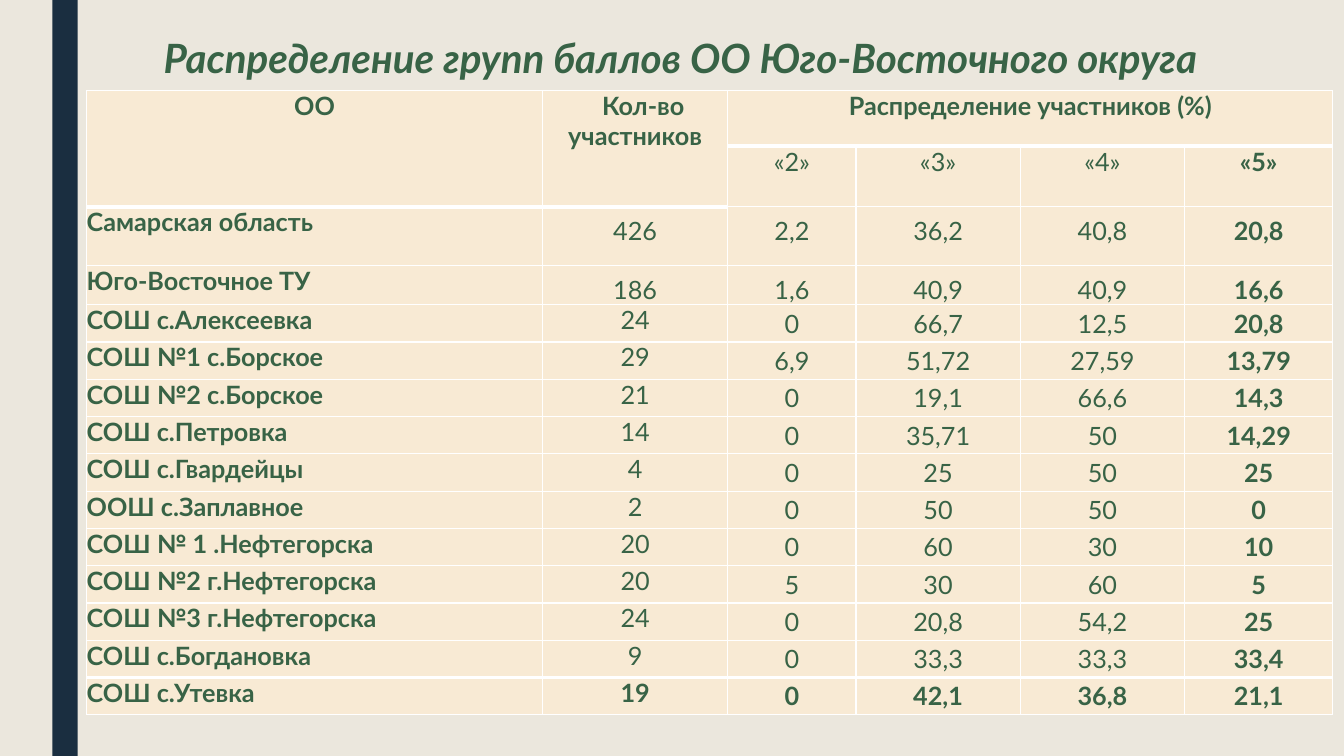
from dataclasses import astuple, dataclass

import lxml.etree
import pptx
import pptx.dml.color
import pptx.enum.shapes
import pptx.enum.text
import pptx.oxml.ns
import pptx.presentation
import pptx.slide
import pptx.table
import pptx.text.text
import pptx.util

Inches = pptx.util.Inches
Pt = pptx.util.Pt
CENTER = pptx.enum.text.PP_ALIGN.CENTER
LEFT = pptx.enum.text.PP_ALIGN.LEFT
TOP = pptx.enum.text.MSO_ANCHOR.TOP
MIDDLE = pptx.enum.text.MSO_ANCHOR.MIDDLE

FONT = "Lato"
GREEN = "386346"
CREAM = "F8EAD4"
SAND = "EBE7DD"
NAVY = "1A2E40"
WHITE = "FFFFFF"


@dataclass
class Result:
    school: str
    participants: str
    twos: str
    threes: str
    fours: str
    fives: str


HEADINGS = [
    Result("ОО", "Кол-во участников", "Распределение участников (%)", "", "", ""),
    Result("", "", "«2»", "«3»", "«4»", "«5»"),
]
REGIONS = [
    Result("Самарская область", "426", "2,2", "36,2", "40,8", "20,8"),
    Result("Юго-Восточное ТУ", "186", "1,6", "40,9", "40,9", "16,6"),
]
SCHOOLS = [
    Result("СОШ с.Алексеевка", "24", "0", "66,7", "12,5", "20,8"),
    Result("СОШ №1 с.Борское", "29", "6,9", "51,72", "27,59", "13,79"),
    Result("СОШ №2 с.Борское", "21", "0", "19,1", "66,6", "14,3"),
    Result("СОШ с.Петровка", "14", "0", "35,71", "50", "14,29"),
    Result("СОШ с.Гвардейцы", "4", "0", "25", "50", "25"),
    Result("ООШ с.Заплавное", "2", "0", "50", "50", "0"),
    Result("СОШ № 1 .Нефтегорска", "20", "0", "60", "30", "10"),
    Result("СОШ №2 г.Нефтегорска", "20", "5", "30", "60", "5"),
    Result("СОШ №3 г.Нефтегорска", "24", "0", "20,8", "54,2", "25"),
    Result("СОШ с.Богдановка", "9", "0", "33,3", "33,3", "33,4"),
    Result("СОШ с.Утевка", "19", "0", "42,1", "36,8", "21,1"),
]
RESULTS = HEADINGS + REGIONS + SCHOOLS
FIRST_REGION = len(HEADINGS)
FIRST_SCHOOL = FIRST_REGION + len(REGIONS)
LAST_ROW = len(RESULTS) - 1
COLUMN_WIDTHS = [4.52, 1.84, 1.27, 1.63, 1.63, 1.47]
ROW_HEIGHTS = [0.55, 0.6, 0.58, 0.39] + [0.37] * len(SCHOOLS)


def color(value: str) -> pptx.dml.color.RGBColor:
    return pptx.dml.color.RGBColor.from_string(value)


def style_text(paragraph: pptx.text.text._Paragraph, size: float,
               bold: bool, italic: bool = False) -> None:
    for run in paragraph.runs:
        run.font.name = FONT
        run.font.size = Pt(size)
        run.font.bold = bold
        run.font.italic = italic
        run.font.color.rgb = color(GREEN)


def edge_width(boundary: int, column: int) -> int:
    under_merged_heading = boundary == FIRST_REGION and column < 2
    return 3 if boundary in (1, LAST_ROW) or under_merged_heading else 1


def draw_borders(cell: pptx.table._Cell, row: int, column: int) -> None:
    widths = {"lnL": 1, "lnR": 1, "lnT": edge_width(row, column),
              "lnB": edge_width(row + 1, column)}
    properties = cell._tc.get_or_add_tcPr()
    for position, (edge, width) in enumerate(widths.items()):
        line = lxml.etree.Element(pptx.oxml.ns.qn(f"a:{edge}"), w=str(Pt(width)))
        fill = lxml.etree.SubElement(line, pptx.oxml.ns.qn("a:solidFill"))
        lxml.etree.SubElement(fill, pptx.oxml.ns.qn("a:srgbClr"), val=WHITE)
        properties.insert(position, line)


def fill_cell(cell: pptx.table._Cell, value: str, row: int, column: int) -> None:
    cell.fill.solid()
    cell.fill.fore_color.rgb = color(CREAM)
    cell.margin_left = cell.margin_right = cell.margin_top = cell.margin_bottom = 0
    cell.vertical_anchor = MIDDLE if row >= FIRST_SCHOOL and column >= 2 else TOP
    draw_borders(cell, row, column)
    if not value:
        return
    cell.text_frame.text = value
    paragraph = cell.text_frame.paragraphs[0]
    is_school_name = row >= FIRST_REGION and column == 0
    paragraph.alignment = LEFT if is_school_name else CENTER
    if FIRST_REGION <= row < FIRST_SCHOOL and column > 0:
        cell.margin_top = Inches(0.21)
        paragraph.line_spacing = Pt(13.2)
    if row == 0 and column == 1:
        paragraph._p.get_or_add_pPr().set("indent", str(Inches(0.16)))
    style_text(paragraph, 18, row in (0, LAST_ROW) or column in (0, 5))


def add_results_table(slide: pptx.slide.Slide) -> None:
    table = slide.shapes.add_table(
        len(RESULTS), len(COLUMN_WIDTHS), Inches(0.86), Inches(0.9),
        Inches(sum(COLUMN_WIDTHS)), Inches(sum(ROW_HEIGHTS))).table
    table.first_row = table.horz_banding = False
    for column, width in zip(table.columns, COLUMN_WIDTHS):
        column.width = Inches(width)
    for row, height in zip(table.rows, ROW_HEIGHTS):
        row.height = Inches(height)
    for row_index, result in enumerate(RESULTS):
        for column_index, value in enumerate(astuple(result)):
            fill_cell(table.cell(row_index, column_index), value, row_index, column_index)
    for column_index in (0, 1):
        table.cell(0, column_index).merge(table.cell(1, column_index))
    table.cell(0, 2).merge(table.cell(0, 5))


def format_title(slide: pptx.slide.Slide) -> None:
    title = slide.shapes.title
    title.left, title.top = Inches(1.5), Inches(0.34)
    title.width, title.height = Inches(10.5), Inches(0.87)
    title.fill.solid()
    title.fill.fore_color.rgb = color(SAND)
    frame = title.text_frame
    frame.text = "Распределение групп баллов ОО Юго-Восточного округа"
    frame.word_wrap = True
    frame.auto_size = pptx.enum.text.MSO_AUTO_SIZE.NONE
    frame.vertical_anchor = TOP
    frame.margin_left = frame.margin_right = 0
    heading = frame.paragraphs[0]
    heading.alignment = CENTER
    heading.line_spacing = 0.89
    style_text(heading, 28.8, True, True)


def add_side_stripe(slide: pptx.slide.Slide) -> None:
    stripe = slide.shapes.add_shape(
        pptx.enum.shapes.MSO_SHAPE.RECTANGLE,
        Inches(0.52), 0, Inches(0.25), Inches(7.5))
    stripe.shadow.inherit = False
    stripe.fill.solid()
    stripe.fill.fore_color.rgb = color(NAVY)
    stripe.line.fill.background()


def main() -> None:
    presentation = pptx.Presentation()
    presentation.slide_width = Inches(13.33)
    presentation.slide_height = Inches(7.5)
    slide = presentation.slides.add_slide(presentation.slide_layouts[5])
    slide.background.fill.solid()
    slide.background.fill.fore_color.rgb = color(SAND)
    add_side_stripe(slide)
    format_title(slide)
    add_results_table(slide)
    presentation.save("out.pptx")


if __name__ == "__main__":
    main()
